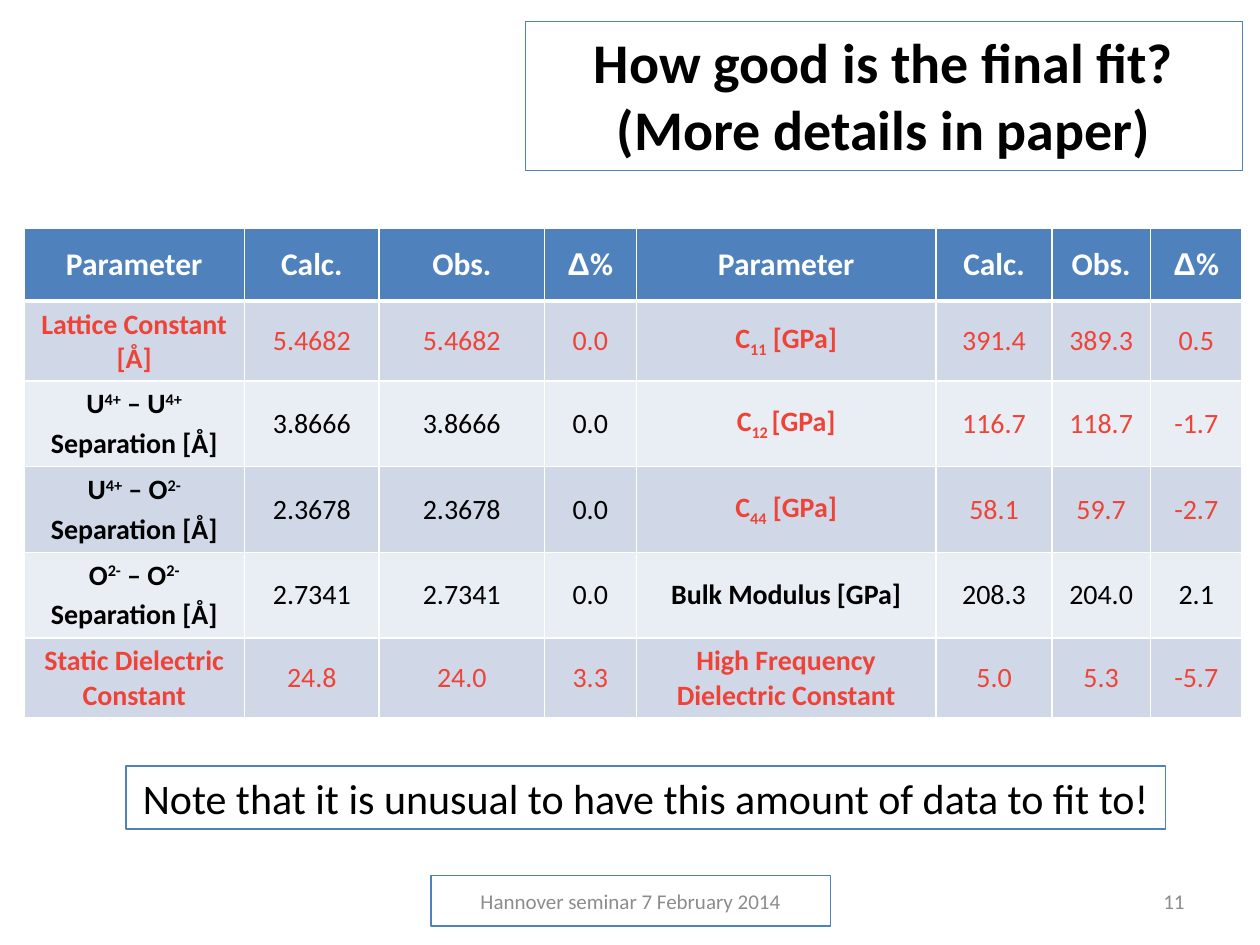
from lxml import etree
from pptx import Presentation
from pptx.dml.color import RGBColor
from pptx.enum import shapes, text
from pptx.oxml import ns
from pptx.util import Inches, Pt

BLUE = RGBColor(0x4F, 0x81, 0xBD)
WHITE = RGBColor(0xFF, 0xFF, 0xFF)
BLACK = RGBColor(0, 0, 0)
GREY = RGBColor(0x8C, 0x8C, 0x8C)
RED = RGBColor(0xEF, 0x43, 0x38)
BANDS = (RGBColor(0xD0, 0xD8, 0xE8), RGBColor(0xE9, 0xED, 0xF4))

COLS = (1.75, 1.07, 1.31, 0.73, 2.38, 0.92, 0.78, 0.73)
ROWS = (0.58, 0.63, 0.68, 0.68, 0.68, 0.63)
HEAD = ("Parameter", "Calc.", "Obs.", "Δ%")
LEFT = (
    (RED, "Lattice Constant [Å]", "5.4682", "5.4682", "0.0"),
    (BLACK, "U^4+^ – U^4+^\nSeparation [Å]", "3.8666", "3.8666", "0.0"),
    (BLACK, "U^4+^ – O^2-^\nSeparation [Å]", "2.3678", "2.3678", "0.0"),
    (BLACK, "O^2-^ – O^2-^\nSeparation [Å]", "2.7341", "2.7341", "0.0"),
    (RED, "Static Dielectric Constant", "24.8", "24.0", "3.3"),
)
RIGHT = (
    (RED, "C_11_ [GPa]", "391.4", "389.3", "0.5"),
    (RED, "C_12 _[GPa]", "116.7", "118.7", "-1.7"),
    (RED, "C_44_ [GPa]", "58.1", "59.7", "-2.7"),
    (BLACK, "Bulk Modulus [GPa]", "208.3", "204.0", "2.1"),
    (RED, "High Frequency Dielectric Constant", "5.0", "5.3", "-5.7"),
)


def style(run, size, color, bold=False):
    font = run.font
    font.name = "Arial" if run.text == "Δ" else "Calibri"
    font.size = Pt(size)
    font.bold = bold
    font.color.rgb = color


def format_text(frame, size, color, bold=False, align=text.PP_ALIGN.CENTER):
    for para in frame.paragraphs:
        para.alignment = align
        for run in para.runs:
            style(run, size, color, bold)


def outline(shape):
    shape.fill.background()
    shape.line.color.rgb = BLUE
    shape.line.width = Pt(0.75)


def add_title(slide, words):
    title = slide.shapes.title
    title.left, title.top = Inches(4.17), Inches(0.17)
    title.width, title.height = Inches(5.69), Inches(1.18)
    outline(title)
    frame = title.text_frame
    frame.text = words
    frame.vertical_anchor = text.MSO_ANCHOR.TOP
    frame.auto_size = text.MSO_AUTO_SIZE.SHAPE_TO_FIT_TEXT
    format_text(frame, 32, BLACK, True)


def add_box(slide, words, left, top, width, height, size, color):
    box = slide.shapes.add_shape(
        shapes.MSO_SHAPE.RECTANGLE,
        Inches(left), Inches(top), Inches(width), Inches(height))
    box.shadow.inherit = False
    outline(box)
    frame = box.text_frame
    frame.text = words
    frame.vertical_anchor = text.MSO_ANCHOR.MIDDLE
    format_text(frame, size, color)
    return box


def add_number(slide, words):
    box = slide.shapes.add_textbox(
        Inches(7.17), Inches(6.95), Inches(2.33), Inches(0.4))
    frame = box.text_frame
    frame.word_wrap = True
    frame.text = words
    frame.vertical_anchor = text.MSO_ANCHOR.MIDDLE
    format_text(frame, 12, GREY, align=text.PP_ALIGN.RIGHT)


def set_borders(cell, row):
    props = cell._tc.get_or_add_tcPr()
    thick = {0: "lnB", 1: "lnT"}.get(row)
    for spot, side in enumerate(("lnL", "lnR", "lnT", "lnB")):
        line = etree.Element(ns.qn("a:" + side))
        line.set("w", str(Pt(3 if side == thick else 1)))
        fill = etree.SubElement(line, ns.qn("a:solidFill"))
        etree.SubElement(fill, ns.qn("a:srgbClr")).set("val", str(WHITE))
        props.insert(spot, line)


def add_runs(para, words):
    mark, shift = ("_", "-25000") if "_" in words else ("^", "30000")
    for i, part in enumerate(words.replace("Δ", "Δ^^").split(mark)):
        if part:
            run = para.add_run()
            run.text = part
            if i % 2:
                run._r.get_or_add_rPr().set("baseline", shift)


def fill_cell(cell, row, words, size, color, bold, fill):
    cell.fill.solid()
    cell.fill.fore_color.rgb = fill
    set_borders(cell, row)
    cell.vertical_anchor = text.MSO_ANCHOR.MIDDLE
    frame = cell.text_frame
    for i, line in enumerate(words.split("\n")):
        para = frame.add_paragraph() if i else frame.paragraphs[0]
        if i:
            para.space_before = Pt(3)
        add_runs(para, line)
    format_text(frame, size, color, bold)


def add_grid(slide):
    grid = slide.shapes.add_table(
        len(ROWS), len(COLS), Inches(0.19), Inches(1.81),
        Inches(sum(COLS)), Inches(sum(ROWS))).table
    for col, width in zip(grid.columns, COLS):
        col.width = Inches(width)
    for row, height in zip(grid.rows, ROWS):
        row.height = Inches(height)
    for c, words in enumerate(HEAD * 2):
        fill_cell(grid.cell(0, c), 0, words, 18, WHITE, True, BLUE)
    for start, half in ((0, LEFT), (len(HEAD), RIGHT)):
        for r, (color, *values) in enumerate(half, 1):
            for c, words in enumerate(values):
                fill_cell(grid.cell(r, start + c), r, words, 16, color,
                          c == 0, BANDS[(r - 1) % 2])


def main():
    deck = Presentation()
    deck.slide_width, deck.slide_height = Inches(10), Inches(7.5)
    slide = deck.slides.add_slide(deck.slide_layouts[5])
    add_title(slide, "How good is the final fit?\n(More details in paper)")
    add_grid(slide)
    add_number(slide, "11")
    add_box(slide, "Hannover seminar 7 February 2014",
            3.42, 6.95, 3.17, 0.4, 12, GREY)
    note = add_box(
        slide, "Note that it is unusual to have this amount of data to fit to!",
        1, 6.08, 8.25, 0.5, 24, BLACK)
    note.text_frame.word_wrap = False
    note.text_frame.vertical_anchor = text.MSO_ANCHOR.TOP
    note.text_frame.auto_size = text.MSO_AUTO_SIZE.SHAPE_TO_FIT_TEXT
    deck.save("out.pptx")


if __name__ == "__main__":
    main()
